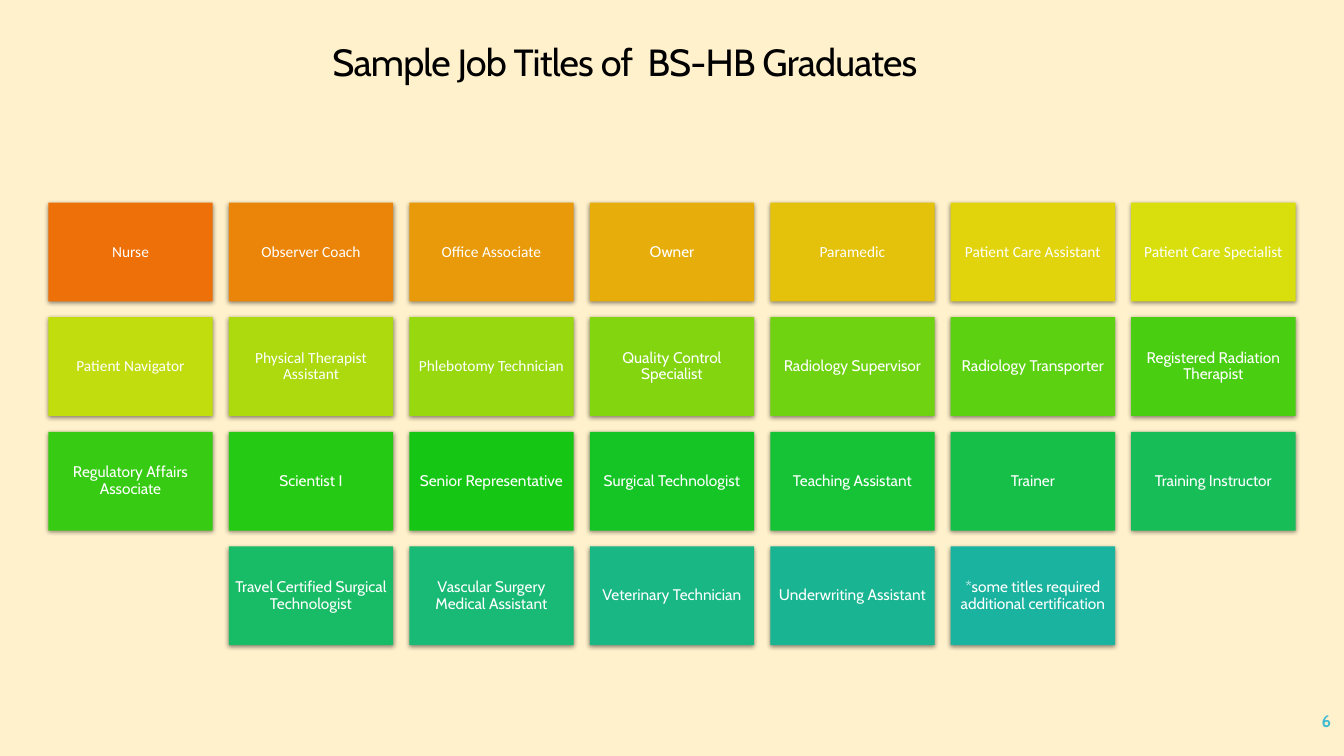
import pptx
import pptx.util
import pptx.dml.color
import pptx.enum.shapes
import pptx.enum.text
import pptx.oxml
import pptx.oxml.ns

Inches = pptx.util.Inches
Pt = pptx.util.Pt
RGBColor = pptx.dml.color.RGBColor
ALIGN = pptx.enum.text.PP_ALIGN
MIDDLE = pptx.enum.text.MSO_ANCHOR.MIDDLE

CREAM = RGBColor(0xFF, 0xF1, 0xCB)
BLACK = RGBColor(0x00, 0x00, 0x00)
WHITE = RGBColor(0xFF, 0xFF, 0xFF)
TEAL = RGBColor(0x40, 0xBA, 0xD2)

# Job title, card colour and font, in reading order
JOBS = [
    ("Nurse", "EE7008", "Calibri"),
    ("Observer Coach", "EB8509", "Calibri"),
    ("Office Associate", "E99A0A", "Calibri"),
    ("Owner", "E7AE0B", "Cabin"),
    ("Paramedic", "E4C10B", "Calibri"),
    ("Patient Care Assistant", "E2D40C", "Calibri"),
    ("Patient Care Specialist", "D8DF0D", "Calibri"),
    ("Patient Navigator", "C2DD0E", "Calibri"),
    ("Physical Therapist Assistant", "ACDA0F", "Calibri"),
    ("Phlebotomy Technician", "97D80F", "Calibri"),
    ("Quality Control Specialist", "83D510", "Cabin"),
    ("Radiology Supervisor", "6FD311", "Cabin"),
    ("Radiology Transporter", "5CD112", "Cabin"),
    ("Registered Radiation Therapist", "49CE12", "Cabin"),
    ("Regulatory Affairs Associate", "37CC13", "Cabin"),
    ("Scientist I", "25CA14", "Cabin"),
    ("Senior Representative", "15C714", "Cabin"),
    ("Surgical Technologist", "15C526", "Cabin"),
    ("Teaching Assistant", "16C337", "Cabin"),
    ("Trainer", "16C048", "Cabin"),
    ("Training Instructor", "17BE58", "Cabin"),
    ("Travel Certified Surgical Technologist", "18BC67", "Cabin"),
    ("Vascular Surgery Medical Assistant", "18BA76", "Cabin"),
    ("Veterinary Technician", "19B784", "Cabin"),
    ("Underwriting Assistant", "19B592", "Cabin"),
    ("*some titles required additional certification", "1AB39F", "Cabin"),
]
COLS = 7
LEFT, TOP = 0.48, 2.01
WIDTH, HEIGHT = 1.63, 0.98
STEP_X, STEP_Y = 1.79, 1.137

SHADOW = (
    f'<a:outerShdw {pptx.oxml.ns.nsdecls("a")} blurRad="44450" dist="13970" '
    'dir="5400000" algn="ctr" rotWithShape="0"><a:srgbClr val="000000">'
    '<a:alpha val="45000"/></a:srgbClr></a:outerShdw>'
)


def style(shape, text, size, font, color, align):
    frame = shape.text_frame
    frame.text = text
    frame.word_wrap = True
    frame.vertical_anchor = MIDDLE
    para = frame.paragraphs[0]
    para.alignment = align
    run = para.runs[0]
    run.font.size = Pt(size)
    run.font.name = font
    run.font.color.rgb = color
    return para


deck = pptx.Presentation()
deck.slide_width = Inches(13.33)
deck.slide_height = Inches(7.5)
slide = deck.slides.add_slide(deck.slide_layouts[5])
slide.background.fill.solid()
slide.background.fill.fore_color.rgb = CREAM

# Title
title = slide.shapes.title
title.left, title.top = Inches(0), Inches(0.4)
title.width, title.height = Inches(12.39), Inches(0.47)
para = style(title, "Sample Job Titles of  BS-HB Graduates", 27, "Cabin",
             BLACK, ALIGN.CENTER)
para.line_spacing = 0.9
para.runs[0]._r.get_or_add_rPr().set("spc", "-60")

# Job cards, with a short last row centred
for i, (job, fill, font) in enumerate(JOBS):
    row, col = divmod(i, COLS)
    count = min(COLS, len(JOBS) - row * COLS)
    x = LEFT + (col + (COLS - count) / 2) * STEP_X
    card = slide.shapes.add_shape(
        pptx.enum.shapes.MSO_SHAPE.RECTANGLE, Inches(x),
        Inches(TOP + row * STEP_Y), Inches(WIDTH), Inches(HEIGHT))
    card.fill.solid()
    card.fill.fore_color.rgb = RGBColor.from_string(fill)
    card.line.fill.background()
    card.shadow.inherit = False
    effects = card._element.spPr.find(pptx.oxml.ns.qn("a:effectLst"))
    effects.append(pptx.oxml.parse_xml(SHADOW))
    para = style(card, job, 11, font, WHITE, ALIGN.CENTER)
    para.line_spacing = 0.9
    frame = card.text_frame
    frame.margin_left = frame.margin_right = Inches(0.05)
    frame.margin_top = frame.margin_bottom = Inches(0.05)

# Slide number
number = slide.shapes.add_textbox(Inches(11.63), Inches(6.95),
                                  Inches(1.67), Inches(0.4))
para = style(number, "6", 12, "Cabin", TEAL, ALIGN.RIGHT)
para.space_after = Pt(6)
para.runs[0].font.bold = True

deck.save("out.pptx")
